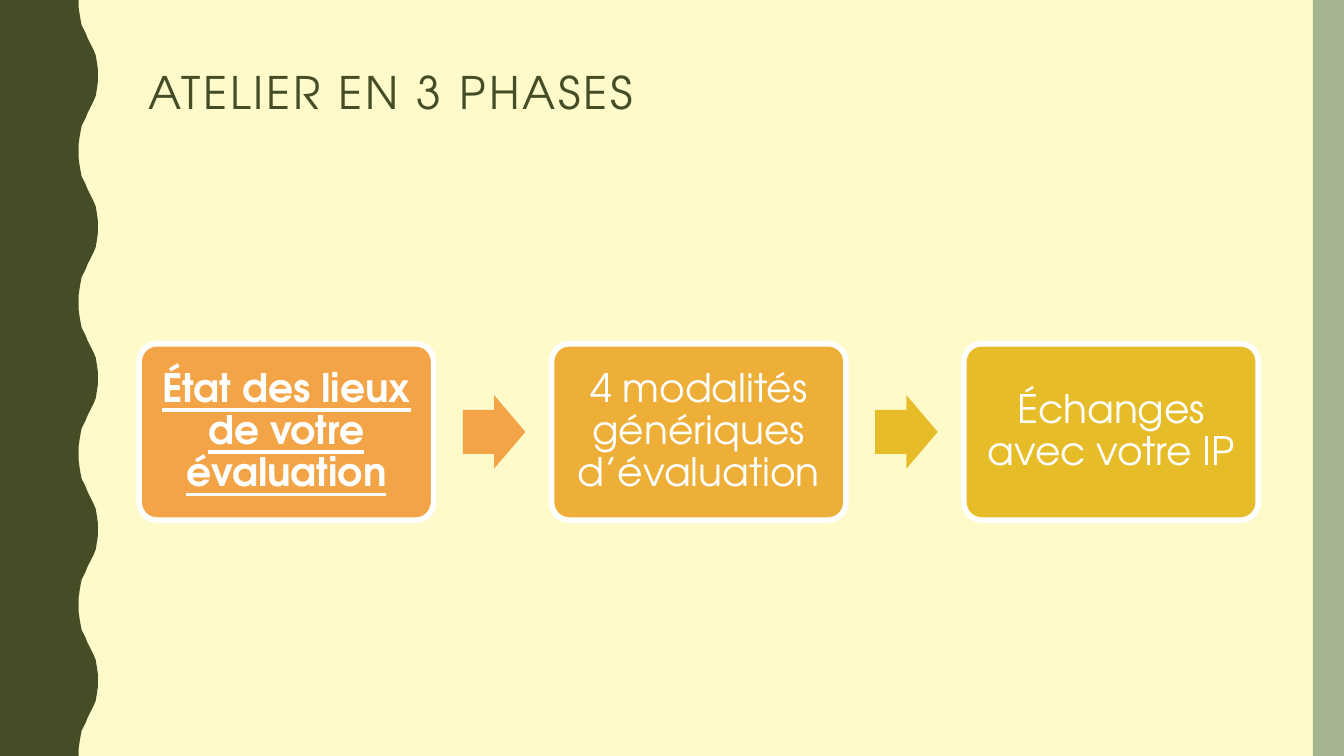
from dataclasses import dataclass

from pptx import Presentation
from pptx import util as u
from pptx.dml.color import RGBColor
from pptx.enum import shapes, text

PX = 9144
W, H = 1333, 750


@dataclass(frozen=True)
class Theme:
    """Colours, font and type sizes of the slide."""
    font: str = "TeX Gyre Adventor"
    background: str = "FEFAC9"
    dark: str = "444D26"
    sage: str = "A5B592"
    white: str = "FFFFFF"
    phases: tuple = ("F3A447", "EDAF38", "E7BC29")
    arrows: tuple = ("F3A447", "E7BC29")
    title_pt: int = 32
    phase_pt: int = 28
    border_pt: int = 4


T = Theme()
PHASES = ("État des lieux de votre évaluation",
          "4 modalités génériques d’évaluation",
          "Échanges avec votre IP")
HALF_WAVE = ((78, 0), (78, 7), (79, 14), (80, 20), (81, 25), (83, 29), (85, 33),
             (87, 38), (89, 42), (91, 46), (93, 50), (95, 55), (96, 61), (97, 68))
WAVE = 150


def px(*lengths):
    """Turn pixel lengths into EMU."""
    return [u.Emu(n * PX) for n in lengths]


def paint(sp, color):
    """Give a shape a flat fill with no outline or shadow."""
    sp.shadow.inherit = False
    sp.fill.solid()
    sp.fill.fore_color.rgb = RGBColor.from_string(color)
    sp.line.fill.background()


def write(sp, words, size, color, align, inset, emphasis=False):
    """Write one paragraph, centred vertically, in a shape."""
    tf = sp.text_frame
    tf.word_wrap = True
    tf.vertical_anchor = text.MSO_ANCHOR.MIDDLE
    tf.margin_left, tf.margin_top, tf.margin_right, tf.margin_bottom = px(*inset)
    p = tf.paragraphs[0]
    p.alignment = align
    p.line_spacing = 0.9
    r = p.add_run()
    r.text = words
    r.font.name = T.font
    r.font.size = u.Pt(size)
    r.font.color.rgb = RGBColor.from_string(color)
    if emphasis:
        r.font.bold = r.font.underline = True
    return r


def add_wavy_band(s, height):
    """Draw the dark left band with its wavy right edge."""
    points = []
    for top in range(0, height, WAVE):
        points += [(x, top + y) for x, y in HALF_WAVE]
        points.append((97, top + WAVE // 2))
        points += [(x, top + WAVE - y) for x, y in reversed(HALF_WAVE)]
    builder = s.shapes.build_freeform(0, 0, scale=PX)
    builder.add_line_segments(points + [(0, height)], close=True)
    paint(builder.convert_to_shape(), T.dark)


def add_side_bar(s, x, y, w, h):
    """Draw the plain bar on the right edge."""
    paint(s.shapes.add_shape(shapes.MSO_SHAPE.RECTANGLE, *px(x, y, w, h)), T.sage)


def add_title(s, x, y, w, h):
    """Place the letter-spaced title."""
    sp = s.shapes.add_textbox(*px(x, y, w, h))
    r = write(sp, "ATELIER EN 3 PHASES", T.title_pt, T.dark,
              text.PP_ALIGN.LEFT, (10, 5, 10, 5))
    r.font._element.set("spc", "200")


def add_phase(s, x, y, w, h, words, color, emphasis):
    """Place one rounded phase card."""
    sp = s.shapes.add_shape(shapes.MSO_SHAPE.ROUNDED_RECTANGLE, *px(x, y, w, h))
    paint(sp, color)
    sp.adjustments[0] = 0.1
    sp.line.color.rgb = RGBColor.from_string(T.white)
    sp.line.width = u.Pt(T.border_pt)
    write(sp, words, T.phase_pt, T.white, text.PP_ALIGN.CENTER, (12,) * 4, emphasis)


def add_arrow(s, x, y, w, h, color):
    """Place one block arrow between two cards."""
    sp = s.shapes.add_shape(shapes.MSO_SHAPE.RIGHT_ARROW, *px(x, y, w, h))
    paint(sp, color)
    sp.adjustments[0] = 0.6
    sp.adjustments[1] = 0.5


def add_process(s, x, y, w, h):
    """Spread the phase cards evenly over a box, with arrows in the gaps."""
    card_w, arrow_w, arrow_h, arrow_gap = 292, 62, 73, 29
    step = (w - card_w) // (len(PHASES) - 1)
    for i, (words, color) in enumerate(zip(PHASES, T.phases)):
        left = x + i * step
        add_phase(s, left, y, card_w, h, words, color, emphasis=i == 0)
        if i < len(T.arrows):
            add_arrow(s, left + card_w + arrow_gap, y + (h - arrow_h) // 2,
                      arrow_w, arrow_h, T.arrows[i])


def add_phases_slide(prs):
    """Build the slide that shows the workshop phases."""
    s = prs.slides.add_slide(prs.slide_layouts[6])
    s.background.fill.solid()
    s.background.fill.fore_color.rgb = RGBColor.from_string(T.background)
    add_wavy_band(s, H)
    add_side_bar(s, W - 31, 0, 31, H)
    add_title(s, 137, 42, 1113, 105)
    add_process(s, 138, 341, 1111, 175)


def main():
    """Build and save the presentation."""
    prs = Presentation()
    prs.slide_width, prs.slide_height = px(W, H)
    add_phases_slide(prs)
    prs.save("out.pptx")


if __name__ == "__main__":
    main()
